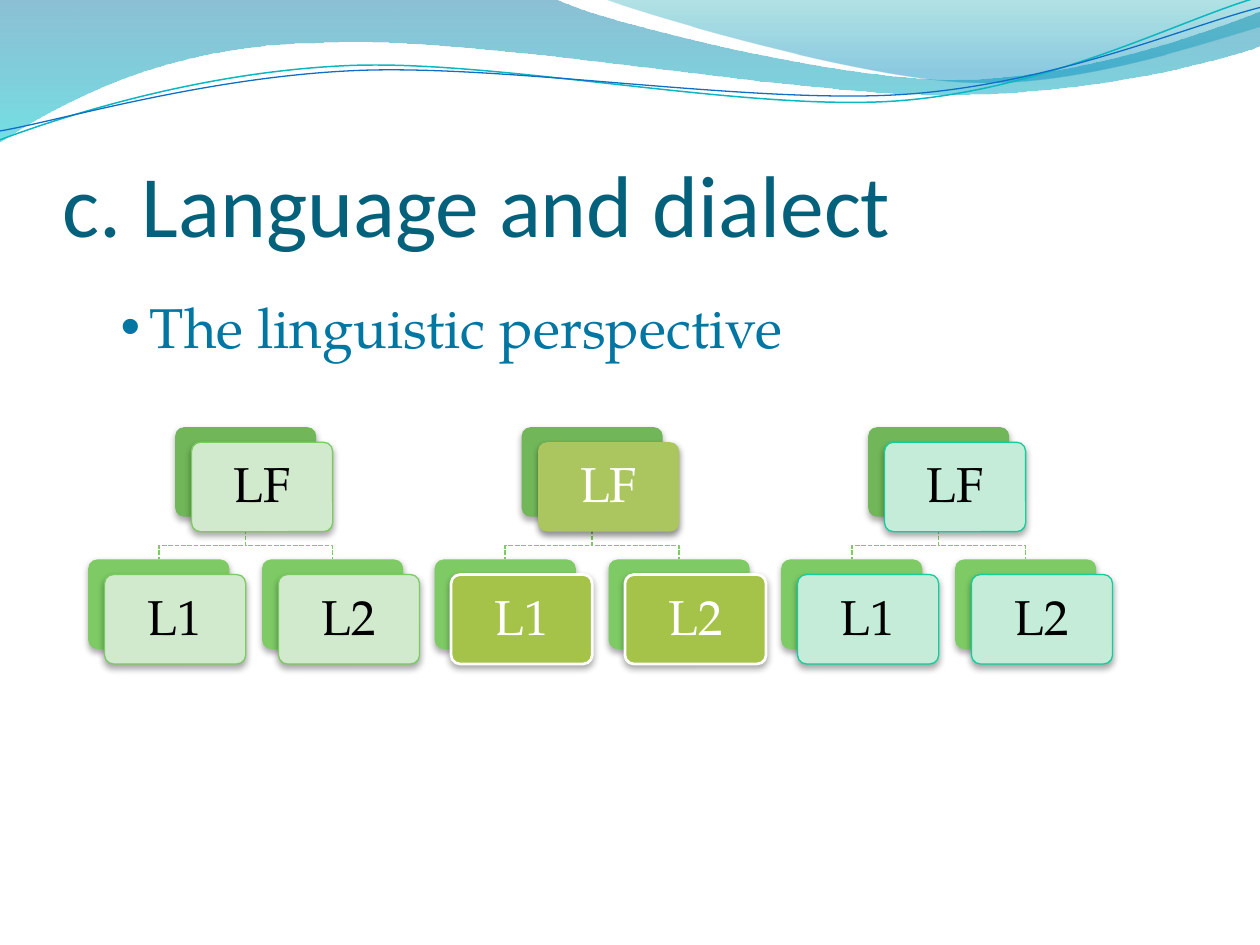
from math import cos, radians, sin

from lxml import etree
from pptx import Presentation
from pptx.dml.color import RGBColor
from pptx.enum.dml import MSO_LINE as Dash
from pptx.enum.shapes import MSO_SHAPE as Shape
from pptx.enum.text import MSO_ANCHOR as Anchor, PP_ALIGN as Align
from pptx.oxml.ns import qn
from pptx.util import Inches, Pt

SERIF = "TeX Gyre Pagella"
CARD_W, CARD_H = 1.12, 0.71
SHIFT_X, SHIFT_Y = 0.13, 0.12   # front card against its back card
STEP_X, STEP_Y = 1.38, 1.05     # between siblings, between levels
TILT = -2.7                     # degrees, for the thin wave lines


def paint(color, value):
    color.rgb = RGBColor.from_string(value)


def set_line(shape, value, width):
    paint(shape.line.color, value)
    shape.line.width = Pt(width)


def add_path(slide, parts, close=False):
    """Draw parts in turn: one point is a line, three are a Bezier curve."""
    dots = [(Inches(x), Inches(y)) for part in parts for x, y in part]
    pen = slide.shapes.build_freeform(*dots[0], scale=1.0)
    pen.add_line_segments(dots[1:], close=close)
    shape = pen.convert_to_shape()
    shape.shadow.inherit = False
    if not close:
        shape.fill.background()
    # Join each group of three points into one curve
    legs = iter(list(shape.element.spPr.iter(qn("a:lnTo"))))
    for part in parts[1:]:
        group = [next(legs) for _ in part]
        if len(group) == 3:
            curve = etree.Element(qn("a:cubicBezTo"))
            group[0].addprevious(curve)
            for leg in group:
                curve.append(leg[0])
                leg.getparent().remove(leg)
    return shape


def add_wave(slide, parts, stops):
    shape = add_path(slide, parts, close=True)
    shape.line.fill.background()
    shape.fill.gradient()
    shape.fill.gradient_angle = 270
    for stop, (place, value, _) in zip(shape.fill.gradient_stops, stops):
        stop.position = place
        paint(stop.color, value)
    tints = shape.element.spPr.iter(qn("a:srgbClr"))
    for tint, (_, _, alpha) in zip(tints, stops):
        etree.SubElement(tint, qn("a:alpha"), val=str(alpha * 1000))


def add_thread(slide, parts, mid, value, width):
    """Draw a tilted line: level the points about mid, then turn the shape."""
    turn, (mx, my) = radians(-TILT), mid

    def level(x, y):
        dx, dy = x - mx, y - my
        return mx + dx * cos(turn) - dy * sin(turn), my + dx * sin(turn) + dy * cos(turn)

    shape = add_path(slide, [[level(*dot) for dot in part] for part in parts])
    shape.rotation = TILT
    set_line(shape, value, width)


def add_waves(slide):
    # Filled bands
    add_wave(slide, [
        [(0, -0.01)], [(4.4, -0.01)],
        [(4.76, 0.17), (6.64, 0.63), (7.58, 0.63)],
        [(8.53, 0.63), (9.58, 0.26), (10, 0.09)], [(10.01, 0.36)],
        [(9.83, 0.44), (8.7, 0.76), (7.46, 0.75)],
        [(6.22, 0.75), (3.82, 0.28), (2.57, 0.34)],
        [(1.29, 0.35), (0.46, 0.83), (-0.01, 1.13)], [(0, -0.01)]],
        [(0, "0074A1", 45), (1, "00C6CF", 55)])
    add_wave(slide, [
        [(4.79, -0.01)],
        [(5.09, 0.11), (6.82, 0.62), (7.69, 0.65)],
        [(8.56, 0.69), (9.61, 0.32), (10, 0.21)], [(10, 0)], [(4.79, -0.01)]],
        [(0, "00A1A9", 30), (0.8, "008BBF", 45)])
    # Thin lines
    add_thread(slide, [
        [(0, 1.11)],
        [(0.48, 0.93), (1.58, 0.57), (2.77, 0.52)],
        [(3.95, 0.47), (5.93, 0.89), (7.13, 0.8)],
        [(8.33, 0.71), (9.38, 0.15), (9.98, -0.02)]],
        (4.99, 0.57), "0AB8BF", 0.85)
    add_thread(slide, [
        [(0, 1.04)],
        [(0.47, 0.96), (1.64, 0.61), (2.83, 0.56)],
        [(4.03, 0.51), (5.97, 0.83), (7.17, 0.75)],
        [(8.36, 0.67), (9.41, 0.21), (10, 0.06)]],
        (5, 0.59), "0F6FC6", 0.75)


def write(frame, text, font, size, value):
    frame.word_wrap = True
    para = frame.paragraphs[0]
    para.text = text
    para.font.name, para.font.size = font, Pt(size)
    paint(para.font.color, value)
    return para


def add_title(slide, x, y, w, h):
    frame = slide.shapes.add_textbox(*map(Inches, (x, y, w, h))).text_frame
    frame.margin_left = frame.margin_right = frame.margin_bottom = 0
    frame.vertical_anchor = Anchor.BOTTOM
    write(frame, "c. Language and dialect", "Calibri", 50, "04617B")


def add_point(slide, x, y, w, h):
    frame = slide.shapes.add_textbox(*map(Inches, (x, y, w, h))).text_frame
    para = write(frame, "The linguistic perspective", SERIF, 32, "0076A3")
    props = para._p.get_or_add_pPr()
    props.set("marL", str(Inches(0.23)))
    props.set("indent", str(Inches(-0.23)))
    props.insert(0, etree.Element(qn("a:buFont"), typeface="Arial"))
    props.insert(1, etree.Element(qn("a:buChar"), char="•"))


def add_card(slide, x, y, value, alpha=35):
    card = slide.shapes.add_shape(
        Shape.ROUNDED_RECTANGLE, *map(Inches, (x, y, CARD_W, CARD_H)))
    card.adjustments[0] = 0.1
    card.fill.solid()
    paint(card.fill.fore_color, value)
    card.line.fill.background()
    # Soft shadow below
    card.shadow.inherit = False
    effects = card.element.spPr.find(qn("a:effectLst"))
    shade = etree.SubElement(effects, qn("a:outerShdw"), blurRad=str(Pt(4)),
                             dist=str(Pt(2)), dir="5400000", rotWithShape="0")
    black = etree.SubElement(shade, qn("a:srgbClr"), val="000000")
    etree.SubElement(black, qn("a:alpha"), val=str(alpha * 1000))
    return card


def add_node(slide, x, y, text, back, look):
    value, edge, ink, alpha = look
    add_card(slide, x, y, back)
    card = add_card(slide, x + SHIFT_X, y + SHIFT_Y, value, alpha)
    if edge:
        set_line(card, *edge)
    frame = card.text_frame
    frame.margin_left = frame.margin_right = Inches(0.12)
    frame.margin_top = frame.margin_bottom = Inches(0.12)
    frame.vertical_anchor = Anchor.MIDDLE
    para = write(frame, text, SERIF, 28, ink)
    para.alignment, para.line_spacing = Align.CENTER, 0.9


def add_tree(slide, x, y, root, leaf):
    top, low = x + STEP_X / 2, y + STEP_Y
    stem, base = top + CARD_W / 2, y + CARD_H
    bend = (base + SHIFT_Y + low) / 2
    kids = [(x, "L1"), (x + STEP_X, "L2")]
    # Branches lie behind the cards
    for left, _ in kids:
        mid = left + CARD_W / 2
        branch = add_path(slide, [
            [(stem, base)], [(stem, bend)], [(mid, bend)], [(mid, low)]])
        set_line(branch, "7ECB65", 0.9)
        branch.line.dash_style = Dash.SQUARE_DOT
    add_node(slide, top, y, "LF", "71B759", root)
    for left, text in kids:
        add_node(slide, left, low, text, "7ECB65", leaf)


def main():
    deck = Presentation()
    deck.slide_width, deck.slide_height = Inches(10), Inches(7.5)
    slide = deck.slides.add_slide(deck.slide_layouts[6])
    add_waves(slide)
    add_title(slide, 0.5, 0.77, 9, 1.25)
    # Looks: fill, edge, text colour, shadow strength
    green = ("D1E9CC", ("7CCA62", 0.75), "000000", 35)
    olive = ("ABC65F", None, "FFFFFF", 45)
    lime = ("A5C249", ("FFFFFF", 1.57), "FFFFFF", 35)
    mint = ("C5EBD9", ("10CF9B", 0.75), "000000", 35)
    for i, looks in enumerate([(green, green), (olive, lime), (mint, mint)]):
        add_tree(slide, 0.7 + 2.75 * i, 3.39, *looks)
    add_point(slide, 0.86, 2.27, 7.42, 0.64)
    deck.save("out.pptx")


if __name__ == "__main__":
    main()
